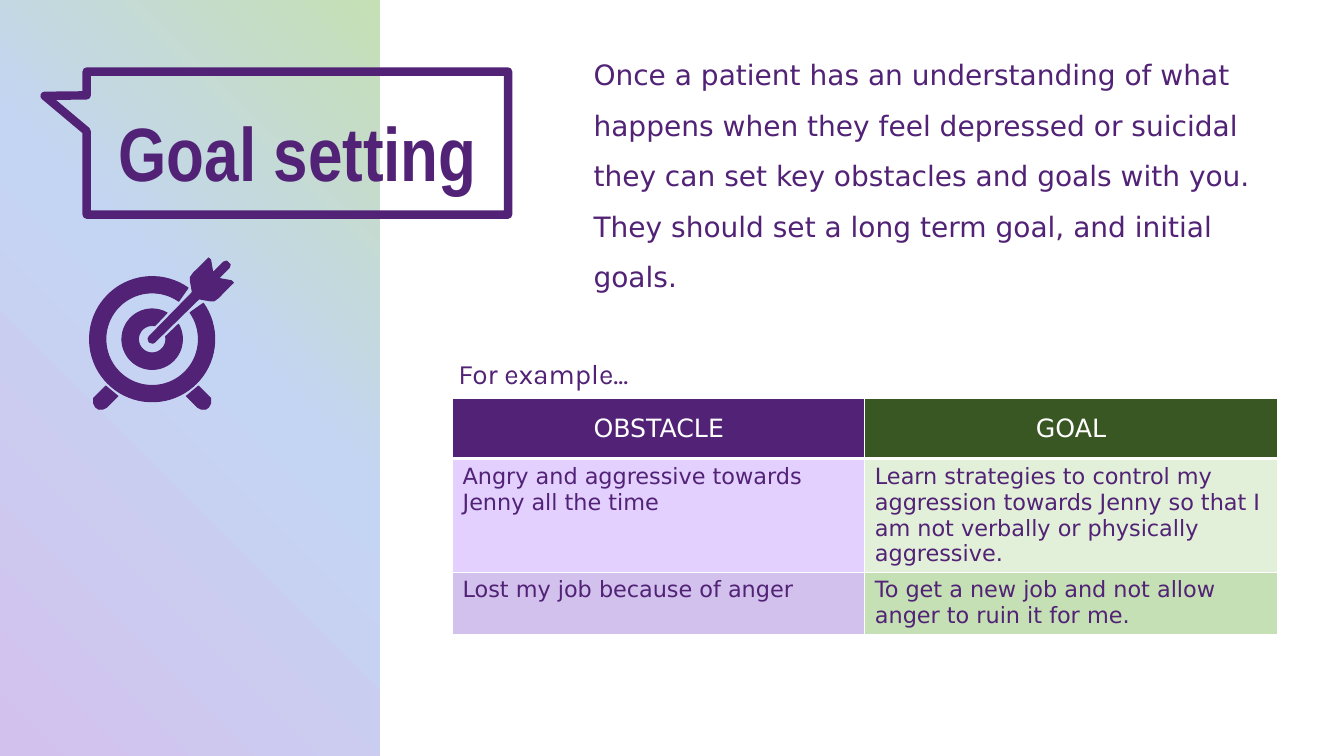
import math
from dataclasses import dataclass

import lxml.etree
import pptx
import pptx.dml.color
import pptx.enum.shapes
import pptx.enum.text
import pptx.oxml
import pptx.oxml.ns
import pptx.util

Pt = pptx.util.Pt
qn = pptx.oxml.ns.qn
Point = tuple[float, float]

PURPLE = "512275"
WHITE = "FFFFFF"
SANS = "DejaVu Sans"
HUB: Point = (108.7, 242.3)


@dataclass
class Label:
    text: str
    box: tuple[float, float, float, float]
    size: float
    font: str
    lead: float
    bold: bool = False
    inset: float = 0


@dataclass
class Ring:
    outer: float
    inner: float
    outer_gap: float
    inner_gap: float


@dataclass
class Entry:
    text: str
    fill: str
    head: bool = False


LABELS = [
    Label("Goal setting", (64, 59, 288, 85.7), 54, "Arial Narrow", 1.2, True, 13.7),
    Label("Once a patient has an understanding of what happens when they feel "
          "depressed or suicidal they can set key obstacles and goals with you. "
          "They should set a long term goal, and initial goals.",
          (416.9, 25.9, 487.4, 189.4), 20, SANS, 1.5),
    Label("For example...", (320.4, 239, 155.5, 40.3), 20, "Karla", 1.5),
]
# Gaps are half-angles in degrees, opening toward the upper right.
RINGS = [Ring(44.7, 33.1, 10, 10), Ring(21.6, 9.8, 15.5, 34)]
FOOT: list[Point] = [
    (-33.1, 33.5), (-40.3, 40.7), (-41.8, 42.1), (-41.8, 45.7), (-40.3, 48.6),
    (-38.2, 50), (-35.3, 50), (-32.4, 48.6), (-24.5, 40.7), (-28.8, 37.1),
]
DART: list[Point] = [
    (-2.2, 1.8), (-2.9, -0.4), (-2.2, -1.8), (28.8, -33.5), (27.4, -41.4),
    (27.4, -44.3), (29.5, -47.2), (38.9, -56.5), (40.3, -58), (41.8, -56.5),
    (43.2, -48.6), (43.9, -47.9), (51.1, -55.1), (53.3, -55.8), (54.7, -54.4),
]
ROWS = [
    [Entry("OBSTACLE", PURPLE, True), Entry("GOAL", "385723", True)],
    [Entry("Angry and aggressive towards Jenny all the time", "E3D0FF"),
     Entry("Learn strategies to control my aggression towards Jenny so that I am "
           "not verbally or physically aggressive.", "E2F0D9")],
    [Entry("Lost my job because of anger", "D3C1ED"),
     Entry("To get a new job and not allow anger to ruin it for me.", "C5E0B4")],
]
HEIGHTS = [43.2, 58.3, 29.5]


def color(code: str) -> pptx.dml.color.RGBColor:
    return pptx.dml.color.RGBColor.from_string(code)


def add_run(para, text: str, size: float, font: str, code: str, bold: bool = False) -> None:
    run = para.add_run()
    run.text = text
    run.font.size = Pt(size)
    run.font.name = font
    run.font.bold = bold
    run.font.color.rgb = color(code)


def add_panel(slide) -> None:
    """Draw the left band, shaded outward from its lower left corner."""
    panel = slide.shapes.add_shape(
        pptx.enum.shapes.MSO_SHAPE.RECTANGLE, 0, 0, Pt(271.4), Pt(540))
    panel.shadow.inherit = False
    panel.line.fill.background()
    panel.fill.gradient()
    grad = panel._element.spPr.find(qn("a:gradFill"))
    for child in list(grad):
        grad.remove(child)
    stops = lxml.etree.SubElement(grad, qn("a:gsLst"))
    for place, code in [(0, "D3C1ED"), (56, "C4D5F3"), (100, "C5E0B4")]:
        stop = lxml.etree.SubElement(stops, qn("a:gs"), pos=str(place * 1000))
        lxml.etree.SubElement(stop, qn("a:srgbClr"), val=code)
    shade = lxml.etree.SubElement(grad, qn("a:path"), path="circle")
    lxml.etree.SubElement(shade, qn("a:fillToRect"), t="100000", r="100000")


def add_callout(slide) -> None:
    box = slide.shapes.add_shape(
        pptx.enum.shapes.MSO_SHAPE.RECTANGULAR_CALLOUT,
        Pt(61.9), Pt(51.1), Pt(301), Pt(102.2))
    box.adjustments[0] = -0.6
    box.adjustments[1] = -0.33
    box.shadow.inherit = False
    box.fill.background()
    box.line.color.rgb = color(PURPLE)
    box.line.width = Pt(6)


def add_label(slide, label: Label) -> None:
    frame = slide.shapes.add_textbox(*map(Pt, label.box)).text_frame
    frame.word_wrap = True
    frame.auto_size = pptx.enum.text.MSO_AUTO_SIZE.SHAPE_TO_FIT_TEXT
    para = frame.paragraphs[0]
    para.line_spacing = label.lead
    if label.inset:
        props = para._p.get_or_add_pPr()
        props.set("marL", str(Pt(label.inset)))
        props.set("indent", "0")
    add_run(para, label.text, label.size, label.font, PURPLE, label.bold)


def arc(radius: float, gap: float) -> list[Point]:
    """Trace a circle from one side of its gap round to the other."""
    steps = 72
    turns = [math.radians(-45 + gap + (360 - 2 * gap) * i / steps)
             for i in range(steps + 1)]
    return [(radius * math.cos(t), radius * math.sin(t)) for t in turns]


def add_part(group, points: list[Point]) -> None:
    spots = [(Pt(HUB[0] + x), Pt(HUB[1] + y)) for x, y in points]
    pen = group.shapes.build_freeform(*spots[0], scale=1.0)
    pen.add_line_segments(spots[1:], close=True)
    part = pen.convert_to_shape()
    part.shadow.inherit = False
    part.fill.solid()
    part.fill.fore_color.rgb = color(PURPLE)
    part.line.color.rgb = color(PURPLE)
    part.line.width = Pt(0.75)


def add_target(slide) -> None:
    group = slide.shapes.add_group_shape()
    for ring in RINGS:
        add_part(group, arc(ring.outer, ring.outer_gap)
                 + arc(ring.inner, ring.inner_gap)[::-1])
    for side in (1, -1):
        add_part(group, [(side * x, y) for x, y in FOOT])
    add_part(group, DART + [(-y, -x) for x, y in reversed(DART)])


def add_edge(cell, side: str, width: float) -> None:
    edge = lxml.etree.SubElement(
        cell._tc.get_or_add_tcPr(), qn(f"a:ln{side}"), w=str(Pt(width)))
    fill = lxml.etree.SubElement(edge, qn("a:solidFill"))
    lxml.etree.SubElement(fill, qn("a:srgbClr"), val=WHITE)


def add_grid(slide) -> None:
    grid = slide.shapes.add_table(
        len(ROWS), 2, Pt(323.3), Pt(284.4), Pt(589), Pt(sum(HEIGHTS))).table
    for i, row in enumerate(ROWS):
        grid.rows[i].height = Pt(HEIGHTS[i])
        for j, entry in enumerate(row):
            cell = grid.cell(i, j)
            for side in "LRTB":
                thick = (side == "B" and i == 0) or (side == "T" and i == 1)
                add_edge(cell, side, 3 if thick else 1)
            cell.fill.solid()
            cell.fill.fore_color.rgb = color(entry.fill)
            para = cell.text_frame.paragraphs[0]
            if entry.head:
                cell.vertical_anchor = pptx.enum.text.MSO_ANCHOR.MIDDLE
                para.alignment = pptx.enum.text.PP_ALIGN.CENTER
            add_run(para, entry.text, 18 if entry.head else 16, SANS,
                    WHITE if entry.head else PURPLE)


def main() -> None:
    deck = pptx.Presentation()
    deck.slide_width, deck.slide_height = Pt(960), Pt(540)
    slide = deck.slides.add_slide(deck.slide_layouts[6])
    add_panel(slide)
    add_callout(slide)
    add_target(slide)
    add_grid(slide)
    for label in LABELS:
        add_label(slide, label)
    deck.save("out.pptx")


if __name__ == "__main__":
    main()
